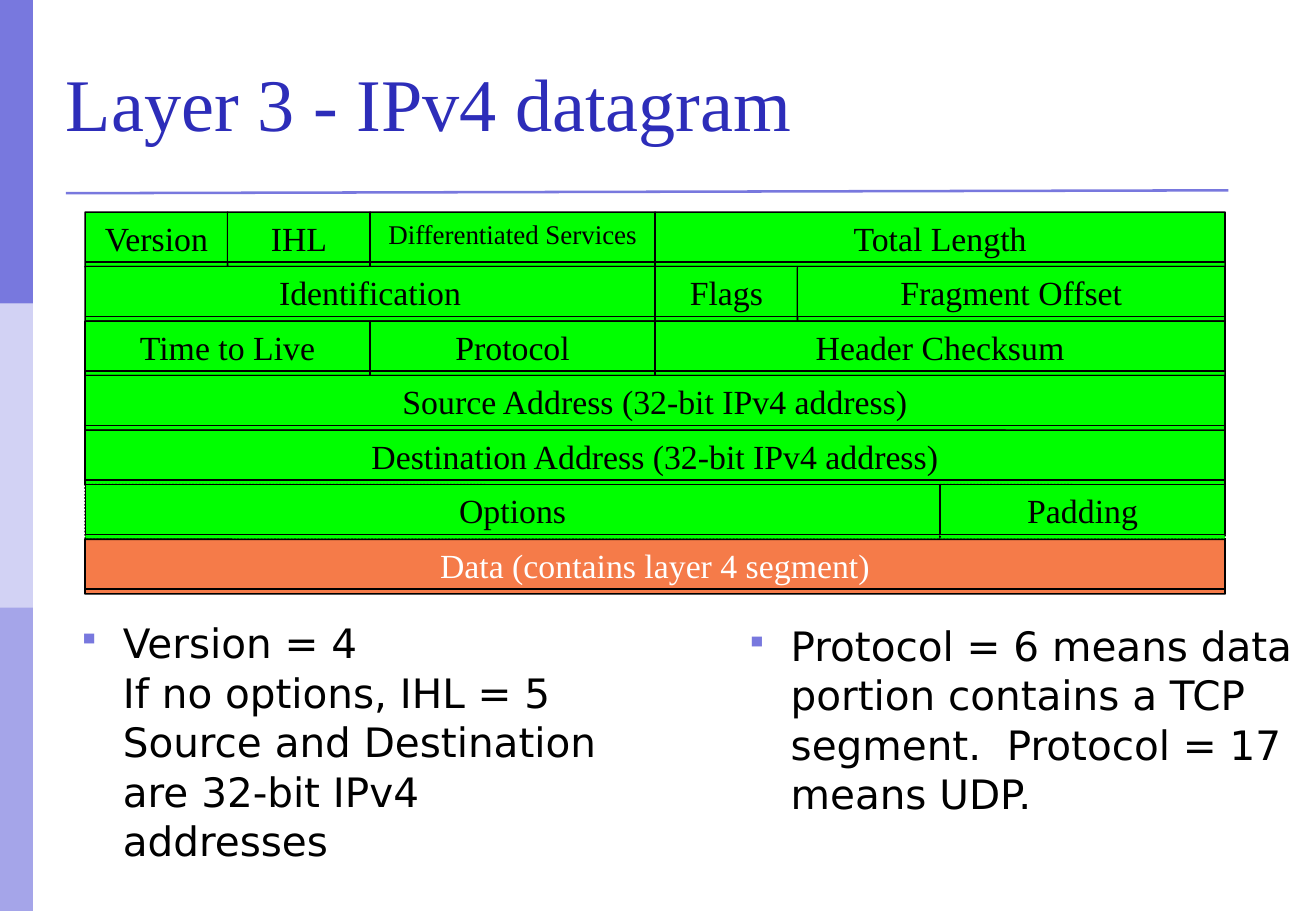
import pptx
import pptx.dml.color
import pptx.enum.dml
import pptx.enum.shapes
import pptx.enum.text
import pptx.oxml
import pptx.oxml.ns
import pptx.util

Cm = pptx.util.Cm
Pt = pptx.util.Pt
RGBColor = pptx.dml.color.RGBColor
Shape = pptx.enum.shapes.MSO_SHAPE
Align = pptx.enum.text.PP_ALIGN
Anchor = pptx.enum.text.MSO_ANCHOR
Dash = pptx.enum.dml.MSO_LINE

BLACK = RGBColor(0, 0, 0)
WHITE = RGBColor(255, 255, 255)
GREEN = RGBColor(0, 255, 0)
ORANGE = RGBColor(0xF5, 0x7B, 0x49)
VIOLET = RGBColor(0x78, 0x78, 0xDE)
PALE_VIOLET = RGBColor(0xD2, 0xD2, 0xF4)
MID_VIOLET = RGBColor(0xA5, 0xA5, 0xE9)
TITLE_BLUE = RGBColor(0x2D, 0x2D, 0xB9)

SERIF = "Times New Roman"
SANS = "DejaVu Sans"

SIDEBAR_COLORS = (VIOLET, PALE_VIOLET, MID_VIOLET)
HEADER_LEFT, HEADER_TOP, HEADER_WIDTH = 1.78, 4.44, 23.83
ROW_HEIGHT, LABEL_HEIGHT = 1.14, 1.04
BITS_PER_ROW = 32

# Each row lists its fields as (name, width in bits).
HEADER_ROWS = (
    (("Version", 4), ("IHL", 4), ("Differentiated Services", 8), ("Total Length", 16)),
    (("Identification", 16), ("Flags", 4), ("Fragment Offset", 12)),
    (("Time to Live", 8), ("Protocol", 8), ("Header Checksum", 16)),
    (("Source Address (32-bit IPv4 address)", 32),),
    (("Destination Address (32-bit IPv4 address)", 32),),
    (("Options", 24), ("Padding", 8)),
    (("Data (contains layer 4 segment)", 32),),
)
OPTIONS_ROW, DATA_ROW = 5, 6


def write_text(shape, text, font=SERIF, size=20, color=BLACK, align=Align.LEFT,
               anchor=Anchor.TOP, insets=(0, 0, 0, 0), line_spacing=1.0, space_before=0):
    """Fill the shape with one paragraph; insets are left, top, right, bottom in cm."""
    frame = shape.text_frame
    frame.word_wrap = True
    frame.vertical_anchor = anchor
    frame.margin_left, frame.margin_top, frame.margin_right, frame.margin_bottom = map(Cm, insets)
    paragraph = frame.paragraphs[0]
    paragraph.text = text
    paragraph.alignment = align
    paragraph.line_spacing = line_spacing
    paragraph.space_before = Pt(space_before)
    for run in paragraph.runs:
        run.font.name = font
        run.font.size = Pt(size)
        run.font.color.rgb = color
    return paragraph


class DatagramSlide:
    def __init__(self, presentation):
        self.slide = presentation.slides.add_slide(presentation.slide_layouts[6])
        self.shapes = self.slide.shapes

    def box(self, left, top, width, height, fill=None, line_width=None, kind=Shape.RECTANGLE):
        shape = self.shapes.add_shape(kind, Cm(left), Cm(top), Cm(width), Cm(height))
        shape.shadow.inherit = False
        if fill is None:
            shape.fill.background()
        else:
            shape.fill.solid()
            shape.fill.fore_color.rgb = fill
        if line_width is None:
            shape.line.fill.background()
        else:
            shape.line.color.rgb = BLACK
            shape.line.width = Pt(line_width)
        return shape

    def text_box(self, left, top, width, height, text, **text_format):
        shape = self.shapes.add_textbox(Cm(left), Cm(top), Cm(width), Cm(height))
        return write_text(shape, text, **text_format)

    def rule(self, start, end):
        connector = self.shapes.add_connector(
            pptx.enum.shapes.MSO_CONNECTOR.STRAIGHT, *map(Cm, start + end))
        connector.line.color.rgb = VIOLET
        connector.line.width = Pt(1.5)
        properties = connector._element.spPr
        properties.append(properties.makeelement(pptx.oxml.ns.qn("a:effectLst"), {}))

    def bullet(self, left, top, width, height, text):
        paragraph = self.text_box(left, top, width, height, text, font=SANS, size=24,
                                  insets=(0.25, 0.13, 0.25, 0.13),
                                  line_spacing=1.02, space_before=6)
        properties = paragraph._p.get_or_add_pPr()
        properties.set("marL", str(Cm(0.94)))
        properties.set("indent", str(Cm(-0.94)))
        namespace = pptx.oxml.ns.nsdecls("a")
        for markup in (f'<a:buClr {namespace}><a:srgbClr val="{VIOLET}"/></a:buClr>',
                       f'<a:buSzPct {namespace} val="75000"/>',
                       f'<a:buChar {namespace} char="▪"/>'):
            properties.append(pptx.oxml.parse_xml(markup))

    def field(self, row, first_bit, bits, name):
        """Draw one header field: an outer frame with a labelled box on top."""
        left = HEADER_LEFT + HEADER_WIDTH * first_bit / BITS_PER_ROW
        top = HEADER_TOP + row * ROW_HEIGHT
        width = HEADER_WIDTH * bits / BITS_PER_ROW
        is_data = row == DATA_ROW
        frame = self.box(left, top, width, ROW_HEIGHT, ORANGE if is_data else GREEN, 1,
                         Shape.ROUNDED_RECTANGLE)
        frame.adjustments[0] = 0.004
        if row == OPTIONS_ROW:
            frame.line.dash_style = Dash.ROUND_DOT
        label = self.box(left, top, width, LABEL_HEIGHT, None if is_data else GREEN, 0.75)
        write_text(label, name, size=16 if name == "Differentiated Services" else 20,
                   color=WHITE if is_data else BLACK, align=Align.CENTER,
                   insets=(0.13, 0.18, 0.13, 0.13), line_spacing=0.93, space_before=12.2)
        self.shapes.add_group_shape([frame, label])


def main():
    presentation = pptx.Presentation()
    presentation.slide_width = Cm(27.51)
    presentation.slide_height = Cm(19.05)
    page = DatagramSlide(presentation)

    for index, color in enumerate(SIDEBAR_COLORS):
        page.box(0, index * 6.35, 0.69, 6.35, color)
    page.rule((1.38, 4.04), (25.68, 3.98))
    page.text_box(1.38, 0.69, 24.74, 3.23, "Layer 3 - IPv4 datagram", size=44,
                  color=TITLE_BLUE, anchor=Anchor.MIDDLE, line_spacing=0.78)

    for row, fields in enumerate(HEADER_ROWS):
        first_bit = 0
        for name, bits in fields:
            page.field(row, first_bit, bits, name)
            first_bit += bits

    page.bullet(1.38, 12.78, 12.17, 6.27,
                "Version = 4\nIf no options, IHL = 5\n"
                "Source and Destination are 32-bit IPv4 addresses")
    page.bullet(15.34, 12.83, 12.17, 5.92,
                "Protocol = 6 means data portion contains a TCP segment.  "
                "Protocol = 17 means UDP.")
    presentation.save("out.pptx")


if __name__ == "__main__":
    main()
